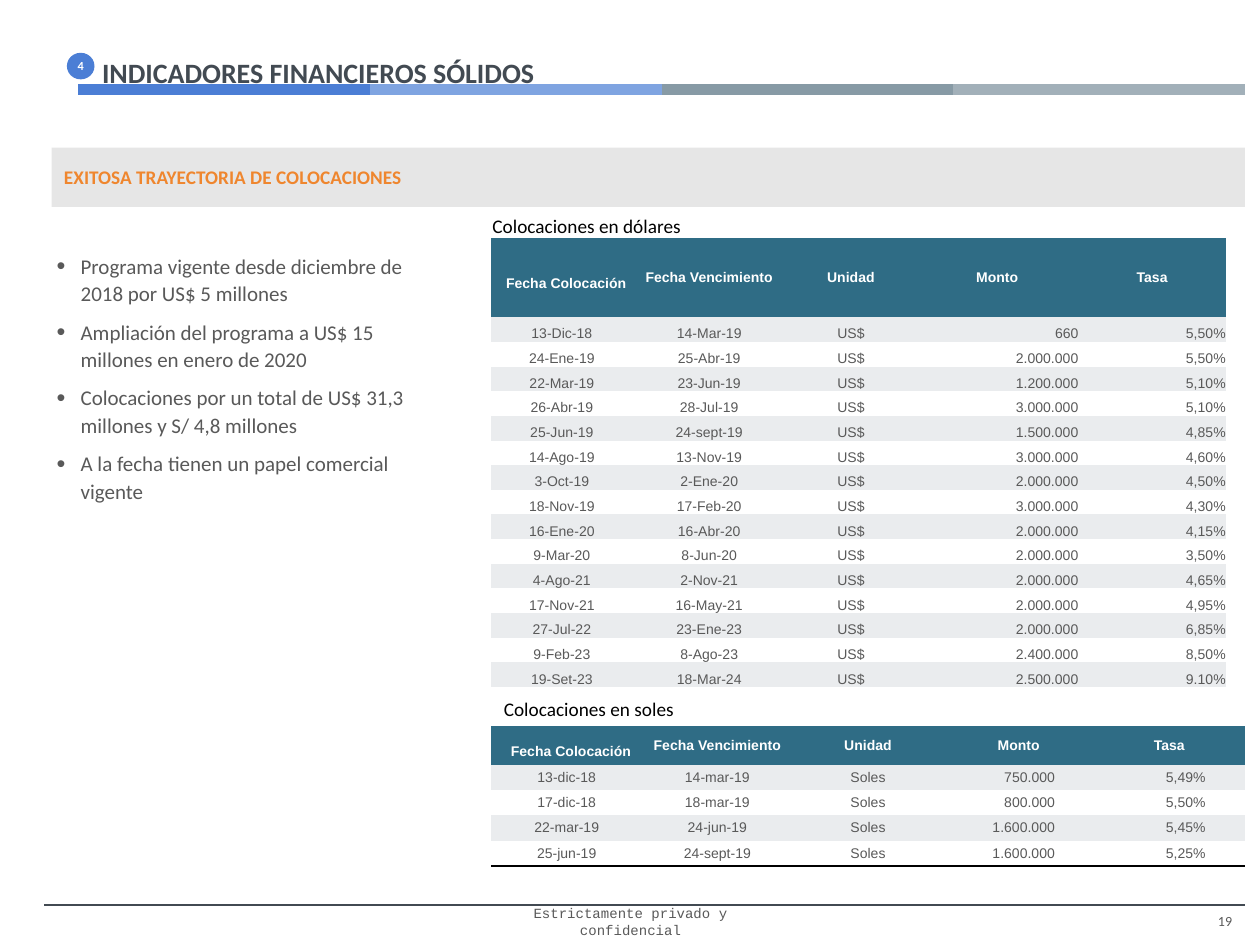
"""Build the slide on solid financial indicators and its placement tables."""
from lxml.etree import SubElement
from pptx import Presentation
from pptx.dml.color import RGBColor
from pptx.enum.shapes import MSO_CONNECTOR as Connector, MSO_SHAPE as Shape
from pptx.enum.text import MSO_ANCHOR as Anchor, MSO_AUTO_SIZE as AutoSize, PP_ALIGN as Align
from pptx.oxml.ns import qn
from pptx.util import Pt

COLORS = {
    "text": "595959", "title": "424A52", "accent": "EF862E", "band": "E6E6E6",
    "badge": "4B7ED5", "header": "2F6C85", "stripe": "EAECEE",
    "white": "FFFFFF", "black": "000000",
}
BAR_COLORS = ["4B7ED5", "7FA4E1", "879AA5", "A2B0B9"]
PLAIN_TABLE = "{2D5ABB26-0587-4C30-8999-92F81FD0307C}"
HEADINGS = ["Fecha Colocación", "Fecha Vencimiento", "Unidad", "Monto", "Tasa"]
BULLETS = [
    "Programa vigente desde diciembre de 2018 por US$ 5 millones",
    "Ampliación del programa a US$ 15 millones en enero de 2020",
    "Colocaciones por un total de US$ 31,3 millones y S/ 4,8 millones",
    "A la fecha tienen un papel comercial vigente",
]
DOLLAR_ROWS = [
    ("13-Dic-18", "14-Mar-19", "US$", "660", "5,50%"),
    ("24-Ene-19", "25-Abr-19", "US$", "2.000.000", "5,50%"),
    ("22-Mar-19", "23-Jun-19", "US$", "1.200.000", "5,10%"),
    ("26-Abr-19", "28-Jul-19", "US$", "3.000.000", "5,10%"),
    ("25-Jun-19", "24-sept-19", "US$", "1.500.000", "4,85%"),
    ("14-Ago-19", "13-Nov-19", "US$", "3.000.000", "4,60%"),
    ("3-Oct-19", "2-Ene-20", "US$", "2.000.000", "4,50%"),
    ("18-Nov-19", "17-Feb-20", "US$", "3.000.000", "4,30%"),
    ("16-Ene-20", "16-Abr-20", "US$", "2.000.000", "4,15%"),
    ("9-Mar-20", "8-Jun-20", "US$", "2.000.000", "3,50%"),
    ("4-Ago-21", "2-Nov-21", "US$", "2.000.000", "4,65%"),
    ("17-Nov-21", "16-May-21", "US$", "2.000.000", "4,95%"),
    ("27-Jul-22", "23-Ene-23", "US$", "2.000.000", "6,85%"),
    ("9-Feb-23", "8-Ago-23", "US$", "2.400.000", "8,50%"),
    ("19-Set-23", "18-Mar-24", "US$", "2.500.000", "9.10%"),
]
SOLES_ROWS = [
    ("13-dic-18", "14-mar-19", "Soles", "750.000", "5,49%"),
    ("17-dic-18", "18-mar-19", "Soles", "800.000", "5,50%"),
    ("22-mar-19", "24-jun-19", "Soles", "1.600.000", "5,45%"),
    ("25-jun-19", "24-sept-19", "Soles", "1.600.000", "5,25%"),
]


def rgb(color):
    return RGBColor.from_string(COLORS.get(color, color))


class SlidePainter:
    def __init__(self, page, font="Calibri"):
        self.page = page
        self.font = font

    def set_text(self, frame, text, size, color, bold=False, align=Align.LEFT, font=None):
        frame.text = text
        for para in frame.paragraphs:
            para.alignment = align
            for span in para.runs:
                span.font.name = font or self.font
                span.font.size = Pt(size)
                span.font.bold = bold
                span.font.color.rgb = rgb(color)

    def place(self, shape, bounds):
        shape.left, shape.top, shape.width, shape.height = map(Pt, bounds)

    def title(self, text, bounds):
        box = self.page.shapes.title
        self.place(box, bounds)
        frame = box.text_frame
        frame.auto_size = AutoSize.NONE
        frame.vertical_anchor = Anchor.BOTTOM
        frame.margin_bottom = 0
        self.set_text(frame, text, 16, "title", bold=True)

    def bullets(self, items, bounds):
        box = self.page.placeholders[1]
        self.place(box, bounds)
        frame = box.text_frame
        frame.auto_size = AutoSize.NONE
        self.set_text(frame, "\n".join(items), 12, "text")
        for index, para in enumerate(frame.paragraphs):
            para.line_spacing = 1.1
            para.space_before = Pt(6 if index else 0)
            props = para._p.get_or_add_pPr()
            props.set("marL", str(Pt(13.7)))
            props.set("indent", str(Pt(-13.7)))
            SubElement(props, qn("a:buSzPct")).set("val", "120000")
            SubElement(props, qn("a:buChar")).set("char", "•")

    def label(self, text, bounds, size, color, anchor=Anchor.TOP, margin=None, **style):
        box = self.page.shapes.add_textbox(*map(Pt, bounds))
        frame = box.text_frame
        frame.word_wrap = True
        frame.vertical_anchor = anchor
        if margin is not None:
            frame.margin_left = frame.margin_right = Pt(margin)
            frame.margin_top = frame.margin_bottom = Pt(margin)
        self.set_text(frame, text, size, color, **style)

    def block(self, kind, text, bounds, fill, size, color, align=Align.LEFT, margin=7.2):
        shape = self.page.shapes.add_shape(kind, *map(Pt, bounds))
        shape.shadow.inherit = False
        shape.fill.solid()
        shape.fill.fore_color.rgb = rgb(fill)
        shape.line.fill.background()
        frame = shape.text_frame
        frame.margin_left = frame.margin_right = Pt(margin)
        frame.vertical_anchor = Anchor.MIDDLE
        self.set_text(frame, text, size, color, bold=True, align=align)

    def rule(self, left, right, top, color, width):
        line = self.page.shapes.add_connector(
            Connector.STRAIGHT, Pt(left), Pt(top), Pt(right), Pt(top))
        line.line.color.rgb = rgb(color)
        line.line.width = Pt(width)
        SubElement(line._element.spPr, qn("a:effectLst"))

    def underline(self, cell):
        border = SubElement(cell._tc.get_or_add_tcPr(), qn("a:lnB"), w=str(Pt(1)))
        fill = SubElement(border, qn("a:solidFill"))
        SubElement(fill, qn("a:srgbClr")).set("val", COLORS["black"])

    def table(self, rows, left, top, widths, head, step, anchor, right=0, closed=False):
        lines = [HEADINGS, *rows]
        frame = self.page.shapes.add_table(
            len(lines), len(widths), Pt(left), Pt(top),
            Pt(sum(widths)), Pt(head + step * len(rows)))
        table = frame.table
        table.first_row = table.horz_banding = False
        table._tbl.tblPr.find(qn("a:tableStyleId")).text = PLAIN_TABLE
        for column, width in zip(table.columns, widths):
            column.width = Pt(width)
        for r, values in enumerate(lines):
            table.rows[r].height = Pt(step if r else head)
            for c, value in enumerate(values):
                cell = table.cell(r, c)
                numeric = r > 0 and c > 2
                first = r == 0 and c == 0
                cell.margin_left = Pt(5 if first else 0)
                cell.margin_right = Pt(right if numeric else 0)
                cell.margin_top = Pt(7 if first else 0)
                cell.margin_bottom = 0
                cell.vertical_anchor = anchor if r else Anchor.MIDDLE
                self.set_text(cell.text_frame, value, 8, "text" if r else "white", bold=r == 0,
                              align=Align.RIGHT if numeric else Align.CENTER, font="Arial")
                if closed and r == len(rows):
                    self.underline(cell)
                if r and r % 2 == 0:
                    cell.fill.background()
                else:
                    cell.fill.solid()
                    cell.fill.fore_color.rgb = rgb("stripe" if r else "header")


def main():
    deck = Presentation()
    deck.slide_width, deck.slide_height = Pt(720), Pt(540)
    painter = SlidePainter(deck.slides.add_slide(deck.slide_layouts[1]))

    painter.label("Estrictamente privado y confidencial", (288, 522, 144.7, 9.4), 8, "text",
                  anchor=Anchor.MIDDLE, margin=0, align=Align.CENTER, font="Courier New")
    painter.rule(25.2, 711.4, 517, "title", 1)
    bar_left, bar_width = 44.6, 166.7
    for index, color in enumerate(BAR_COLORS):
        start = bar_left + index * bar_width
        painter.rule(start, start + bar_width, 51.1, color, 6)

    painter.title("INDICADORES FINANCIEROS SÓLIDOS", (51.1, 10, 652.3, 41))
    painter.label("19", (676, 513.4, 48.2, 26), 8, "text",
                  anchor=Anchor.MIDDLE, align=Align.CENTER)
    painter.block(Shape.RECTANGLE, "EXITOSA TRAYECTORIA DE COLOCACIONES",
                  (29.5, 84.3, 681.9, 34), "band", 11, "accent")
    painter.block(Shape.OVAL, "4", (38.2, 30.2, 15.8, 15.2), "badge", 7, "white",
                  align=Align.CENTER, margin=0)
    painter.bullets(BULLETS, (25.2, 139.7, 226.8, 152.6))

    painter.label("Colocaciones en dólares", (274.3, 118.8, 244, 20.9), 11, "black")
    painter.table(DOLLAR_ROWS, 280.8, 136.1, [80.6, 87.8, 74.2, 92.9, 84.2],
                  45.2, 14.1, Anchor.BOTTOM)
    painter.label("Colocaciones en soles", (280.8, 394.6, 244, 20.9), 11, "black")
    painter.table(SOLES_ROWS, 280.8, 414.7, [86.1] * 5, 22.5, 14.4,
                  Anchor.MIDDLE, right=22.3, closed=True)
    deck.save("out.pptx")


if __name__ == "__main__":
    main()
